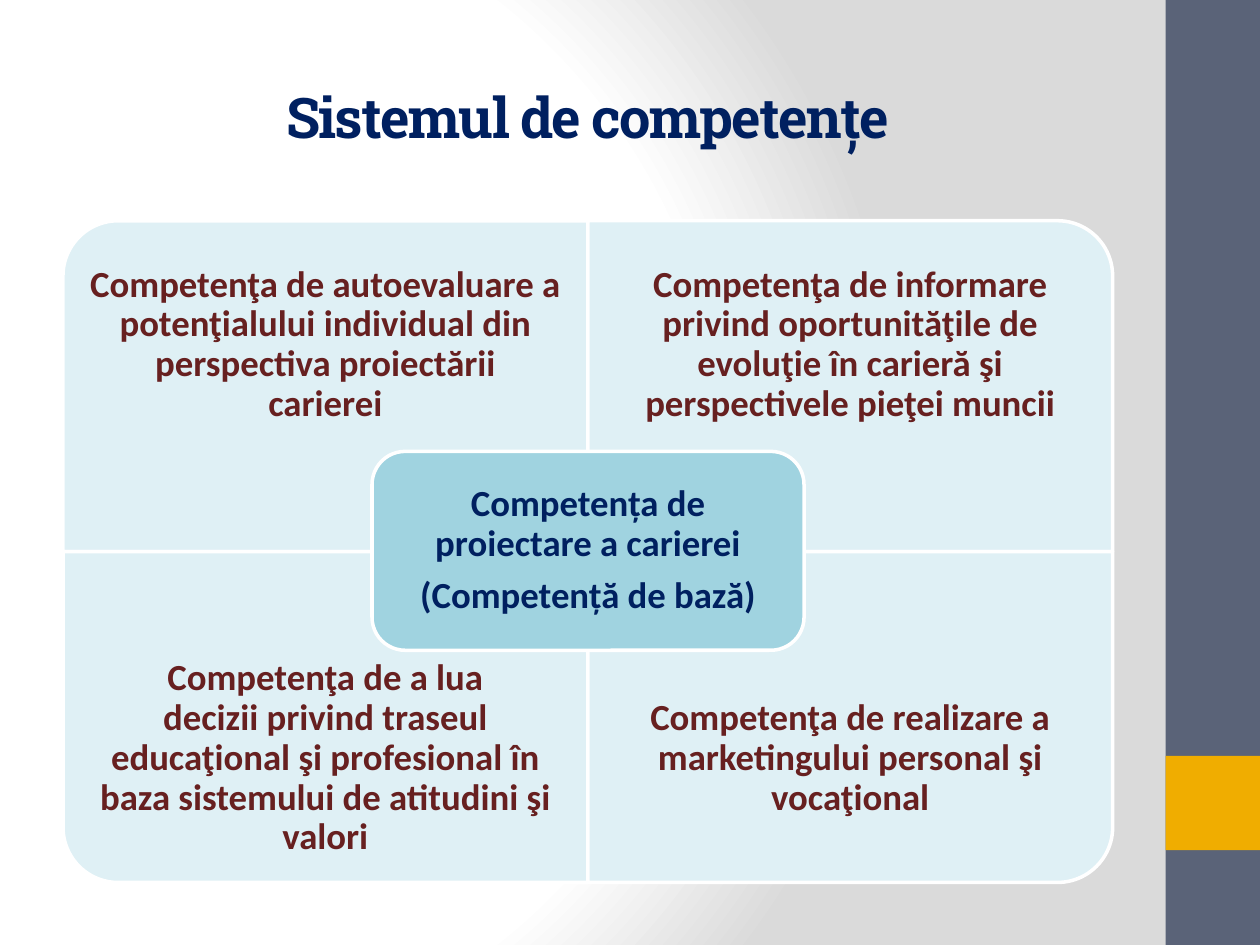
from lxml.etree import SubElement
from pptx import Presentation
from pptx.dml.color import RGBColor
from pptx.enum.shapes import MSO_SHAPE
from pptx.enum.text import MSO_ANCHOR, PP_ALIGN
from pptx.oxml.ns import qn
from pptx.util import Cm, Pt

WHITE = RGBColor(0xFF, 0xFF, 0xFF)
GREY = RGBColor(0xDA, 0xDA, 0xDA)
SLATE = RGBColor(0x5A, 0x63, 0x78)
AMBER = RGBColor(0xF0, 0xAD, 0x00)
NAVY = RGBColor(0x00, 0x20, 0x60)
MAROON = RGBColor(0x67, 0x20, 0x20)
PALE_BLUE = RGBColor(0xDF, 0xF0, 0xF5)
MID_BLUE = RGBColor(0xA0, 0xD3, 0xE0)

LEFT, TOP = 1.27, 4.45
CELL_WIDTH, CELL_HEIGHT = 10.58, 6.67
TEXT_HEIGHT = 5

deck = Presentation()
deck.slide_width, deck.slide_height = Cm(25.4), Cm(19.05)
page = deck.slides.add_slide(deck.slide_layouts[6])


def add_panel(kind, left, top, width, height, colour, outlined=True):
    panel = page.shapes.add_shape(kind, Cm(left), Cm(top), Cm(width), Cm(height))
    panel.shadow.inherit = False
    panel.fill.solid()
    panel.fill.fore_color.rgb = colour
    if outlined:
        panel.line.color.rgb = WHITE
        panel.line.width = Pt(2)
    else:
        panel.line.fill.background()
    return panel


def write_text(box, lines, colour, inset, font="Calibri", size=21, spacing=0.9, after=7):
    frame = box.text_frame
    frame.word_wrap = True
    frame.vertical_anchor = MSO_ANCHOR.MIDDLE
    frame.margin_left = frame.margin_right = Cm(inset)
    frame.margin_top = frame.margin_bottom = Cm(inset)
    frame.text = "\n".join(lines)
    for para in frame.paragraphs:
        para.alignment = PP_ALIGN.CENTER
        para.line_spacing = spacing
        para.space_after = Pt(after)
        para.font.name = font
        para.font.size = Pt(size)
        para.font.bold = True
        para.font.color.rgb = colour


# Background: white circle fading to grey on the right
fill = page.background.fill
fill.gradient()
for stop, colour, position in zip(fill.gradient_stops, (WHITE, GREY), (0.75, 1)):
    stop.color.rgb = colour
    stop.position = position
gradient = page.background._cSld.find(".//" + qn("a:gradFill"))
gradient.remove(gradient.find(qn("a:lin")))
circle = SubElement(gradient, qn("a:path"), {"path": "circle"})
SubElement(circle, qn("a:fillToRect"),
           {"l": "20000", "t": "50000", "r": "100000", "b": "50000"})

# Side band
add_panel(MSO_SHAPE.RECTANGLE, 23.5, 0, 1.9, 19.05, SLATE, outlined=False)
add_panel(MSO_SHAPE.RECTANGLE, 23.5, 15.24, 1.9, 1.9, AMBER, outlined=False)

# Title
title = page.shapes.add_textbox(Cm(LEFT), Cm(0.76), Cm(2 * CELL_WIDTH), Cm(3.18))
write_text(title, ["Sistemul de competențe"], NAVY, 0.25, "Roboto Slab", 32, 1, 0)
for span in title.text_frame.paragraphs[0].runs:
    span.font._element.set("spc", "-100")

# Four quadrants: column, row, rotation of the rounded corner, text
quadrants = [
    (0, 0, 270, "Competenţa de autoevaluare a potenţialului individual din "
                "perspectiva proiectării\vcarierei"),
    (1, 0, 0, "Competenţa de informare privind oportunităţile de "
              "evoluţie în carieră şi perspectivele pieţei muncii"),
    (0, 1, 180, "Competenţa de a lua\vdecizii privind traseul educaţional şi "
                "profesional în baza sistemului de atitudini şi valori"),
    (1, 1, 90, "Competenţa de realizare a marketingului personal şi vocaţional"),
]
for column, row, rotation, text in quadrants:
    left = LEFT + column * CELL_WIDTH
    top = TOP + row * CELL_HEIGHT
    width, height = CELL_WIDTH, CELL_HEIGHT
    if rotation in (90, 270):
        width, height = height, width
    quadrant = add_panel(MSO_SHAPE.ROUND_1_RECTANGLE,
                         left + (CELL_WIDTH - width) / 2,
                         top + (CELL_HEIGHT - height) / 2,
                         width, height, PALE_BLUE)
    quadrant.rotation = rotation
    # Text keeps to the outer part, clear of the central box
    text_top = top + row * (CELL_HEIGHT - TEXT_HEIGHT)
    box = page.shapes.add_textbox(Cm(left), Cm(text_top), Cm(CELL_WIDTH), Cm(TEXT_HEIGHT))
    write_text(box, [text], MAROON, 0.4)

# Central competence
centre = add_panel(MSO_SHAPE.ROUNDED_RECTANGLE, 7.5, 9.1, 8.71, 4.01, MID_BLUE)
write_text(centre, ["Competența de proiectare a carierei", "(Competență de bază)"],
           NAVY, 0.23)

deck.save("out.pptx")
